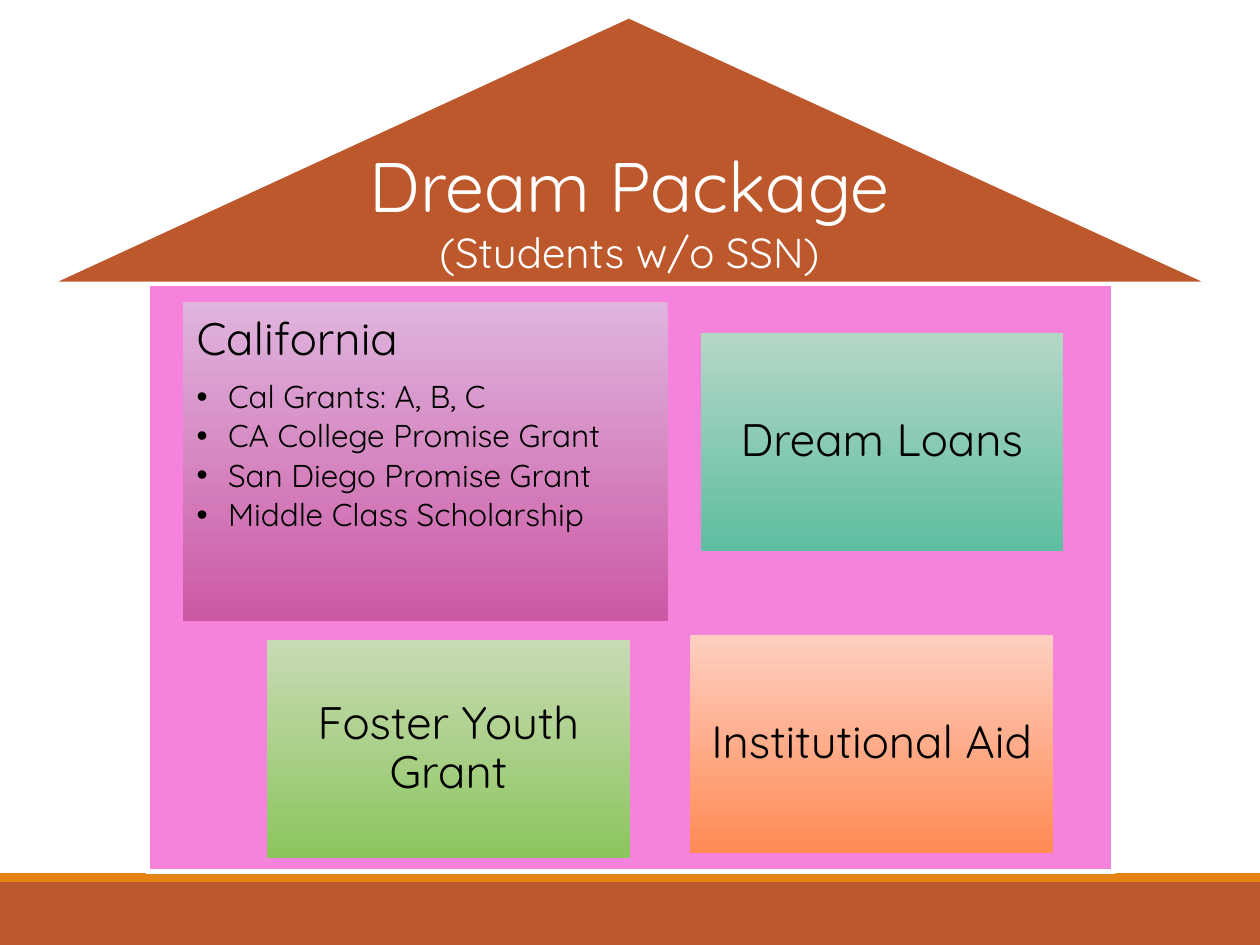
from lxml.etree import SubElement
from pptx import Presentation
from pptx.dml.color import RGBColor
from pptx.enum.shapes import MSO_SHAPE as Preset
from pptx.enum.text import MSO_ANCHOR as Anchor, MSO_AUTO_SIZE as AutoSize, PP_ALIGN as Align
from pptx.oxml.ns import qn
from pptx.util import Inches, Pt

FONT = "Quicksand"
COLORS = {
    "brick": "BD582C",
    "trim": "E48312",
    "wall": "F583DB",
    "white": "FFFFFF",
    "black": "000000",
}
GRADIENTS = {
    "state": ("DFB4DD", "CC59A4"),
    "loans": ("B5D7C6", "5EBEA1"),
    "foster": ("C9DBB5", "8BC55D"),
    "institution": ("FECFC1", "FF8A54"),
}
AID_SIZE = (2.88, 1.73)
STATE_BOX = (1.45, 2.4, 3.85, 2.53)
AID_PANELS = [
    ("Dream Loans", "loans", (5.56, 2.64)),
    ("Foster Youth Grant", "foster", (2.12, 5.08)),
    ("Institutional Aid", "institution", (5.48, 5.04)),
]
STATE_GRANTS = [
    "Cal Grants: A, B, C",
    "CA College Promise Grant",
    "San Diego Promise Grant",
    "Middle Class Scholarship",
]


def set_attributes(target, values):
    for name, value in values.items():
        setattr(target, name, value)


def place(shape, box):
    names = ("left", "top", "width", "height")
    set_attributes(shape, dict(zip(names, map(Inches, box))))


def add_block(slide, preset, box, fill, line_width=0):
    shape = slide.shapes.add_shape(preset, *map(Inches, box))
    shape.shadow.inherit = False
    shape.fill.solid()
    shape.fill.fore_color.rgb = RGBColor.from_string(COLORS[fill])
    if line_width:
        shape.line.color.rgb = RGBColor.from_string(COLORS["white"])
        shape.line.width = Pt(line_width)
    else:
        shape.line.fill.background()
    return shape


def add_panel(slide, box, gradient):
    shape = add_block(slide, Preset.RECTANGLE, box, "wall")
    shape.fill.gradient()
    shape.fill.gradient_angle = 270
    for stop, color in zip(shape.fill.gradient_stops, GRADIENTS[gradient]):
        stop.color.rgb = RGBColor.from_string(color)
    return shape


def format_frame(frame, anchor, side, vertical):
    set_attributes(frame, {
        "word_wrap": True,
        "auto_size": AutoSize.NONE,
        "vertical_anchor": anchor,
        "margin_left": Inches(side),
        "margin_right": Inches(side),
        "margin_top": Inches(vertical),
        "margin_bottom": Inches(vertical),
    })


def write(paragraph, text, size, color="black", align=Align.LEFT, spacing=0.9, before=0):
    set_attributes(paragraph, {
        "alignment": align,
        "line_spacing": spacing,
        "space_before": Pt(before),
        "space_after": Pt(0),
    })
    run = paragraph.add_run()
    run.text = text
    set_attributes(run.font, {"name": FONT, "size": Pt(size), "bold": False})
    run.font.color.rgb = RGBColor.from_string(COLORS[color])


def set_bullet(paragraph, indent=0, character=None):
    properties = paragraph._p.get_or_add_pPr()
    properties.set("marL", str(Inches(indent)))
    properties.set("indent", str(-Inches(indent)))
    if character:
        bullet_color = SubElement(properties, qn("a:buClr"))
        SubElement(bullet_color, qn("a:srgbClr"), val=COLORS["black"])
        SubElement(properties, qn("a:buFont"), typeface="Arial")
        SubElement(properties, qn("a:buChar"), char=character)
    else:
        SubElement(properties, qn("a:buNone"))


def bring_to_front(shape):
    shape.element.getparent().append(shape.element)


def add_title(slide):
    title = slide.shapes.title
    place(title, (2.69, 1.05, 4.61, 1.2))
    frame = title.text_frame
    format_frame(frame, Anchor.BOTTOM, 0.1, 0.05)
    heading = {"color": "white", "align": Align.CENTER, "spacing": 1.0}
    write(frame.paragraphs[0], "Dream Package", 40, **heading)
    write(frame.add_paragraph(), "(Students w/o SSN)", 24, **heading)
    bring_to_front(title)


def add_state_list(slide):
    add_panel(slide, STATE_BOX, "state")
    body = slide.placeholders[1]
    place(body, STATE_BOX)
    frame = body.text_frame
    format_frame(frame, Anchor.TOP, 0.11, 0.11)
    set_bullet(frame.paragraphs[0])
    write(frame.paragraphs[0], "California", 26)
    for index, grant in enumerate(STATE_GRANTS):
        paragraph = frame.add_paragraph()
        paragraph.level = 1
        set_bullet(paragraph, 0.25, "•")
        write(paragraph, grant, 18, before=3 if index else 9.1)
    bring_to_front(body)


def add_aid_panel(slide, label, gradient, corner):
    frame = add_panel(slide, corner + AID_SIZE, gradient).text_frame
    format_frame(frame, Anchor.MIDDLE, 0.11, 0.11)
    write(frame.paragraphs[0], label, 26, align=Align.CENTER)


def main():
    presentation = Presentation()
    presentation.slide_width = Inches(10)
    presentation.slide_height = Inches(7.5)
    slide = presentation.slides.add_slide(presentation.slide_layouts[1])
    add_block(slide, Preset.RECTANGLE, (0, 7, 10, 0.5), "brick")
    add_block(slide, Preset.RECTANGLE, (0, 6.93, 10, 0.07), "trim")
    add_block(slide, Preset.RECTANGLE, (1.17, 2.25, 7.67, 4.67), "wall", 3)
    add_state_list(slide)
    for label, gradient, corner in AID_PANELS:
        add_aid_panel(slide, label, gradient, corner)
    roof = add_block(slide, Preset.ISOSCELES_TRIANGLE, (0.39, 0.13, 9.22, 2.12), "brick", 2.25)
    roof.adjustments[0] = 0.499
    add_title(slide)
    presentation.save("out.pptx")


if __name__ == "__main__":
    main()
